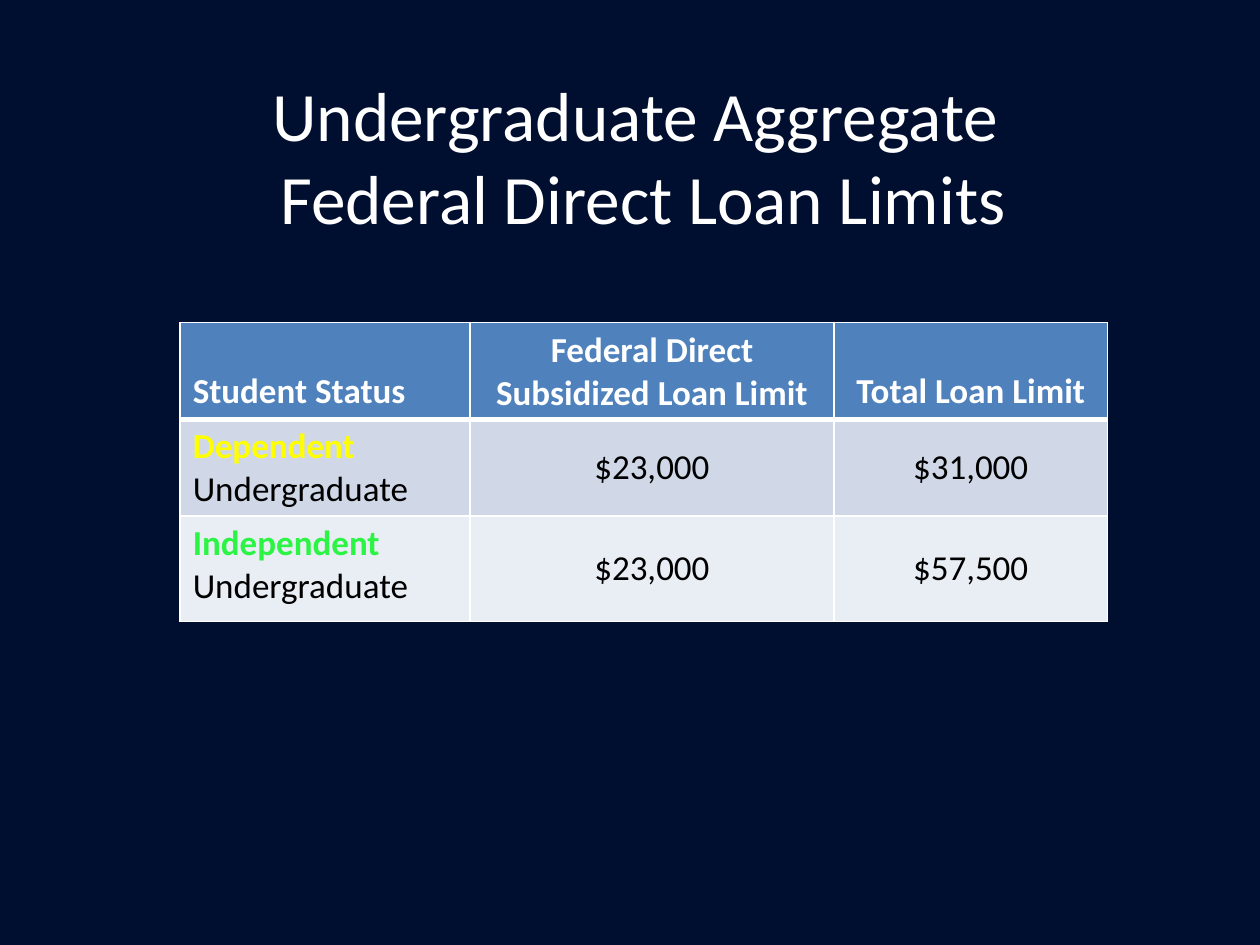
from lxml.etree import SubElement
from pptx import Presentation
from pptx.dml.color import RGBColor
from pptx.enum.text import MSO_ANCHOR, PP_ALIGN
from pptx.oxml.ns import qn
from pptx.util import Inches, Pt

WHITE = "FFFFFF"
BLACK = "000000"


def style_run(run, size, color, bold=False):
    run.font.name = "Calibri"
    run.font.size = Pt(size)
    run.font.bold = bold
    run.font.color.rgb = RGBColor.from_string(color)


def set_borders(cell, widths):
    """Draw white cell borders; widths maps a side tag to points."""
    properties = cell._tc.get_or_add_tcPr()
    for index, (side, width) in enumerate(widths.items()):
        line = SubElement(properties, qn(f"a:{side}"), w=str(Pt(width)))
        fill = SubElement(line, qn("a:solidFill"))
        SubElement(fill, qn("a:srgbClr"), val=WHITE)
        properties.insert(index, line)  # borders come before the cell fill


presentation = Presentation()
presentation.slide_width = Inches(10)
presentation.slide_height = Inches(7.5)
slide = presentation.slides.add_slide(presentation.slide_layouts[6])
slide.background.fill.solid()
slide.background.fill.fore_color.rgb = RGBColor.from_string("000E2F")

# Title
title = slide.shapes.add_textbox(Inches(0.44), Inches(0.61), Inches(9.33), Inches(1.25))
title_frame = title.text_frame
title_frame.word_wrap = True
title_frame.vertical_anchor = MSO_ANCHOR.MIDDLE
title_frame.text = "Undergraduate Aggregate \vFederal Direct Loan Limits"
title_paragraph = title_frame.paragraphs[0]
title_paragraph.alignment = PP_ALIGN.CENTER
for run in title_paragraph.runs:
    style_run(run, 39.6, WHITE)

# Loan limits table: each cell is a list of (text, color, bold) runs
column_widths = [2.3, 2.89, 2.17]
row_heights = [0.73, 0.73, 0.84]
row_fills = ["4F81BD", "D0D8E8", "E9EDF4"]
headers = ["Student Status", "Federal Direct Subsidized Loan Limit", "Total Loan Limit"]
rows = [[[(header, WHITE, True)] for header in headers]]
for status, status_color, *limits in [
    ("Dependent", "FFFF00", "$23,000", "$31,000"),
    ("Independent", "2CF444", "$23,000", "$57,500"),
]:
    status_runs = [(status, status_color, True), (" Undergraduate", BLACK, False)]
    rows.append([status_runs] + [[(limit, BLACK, False)] for limit in limits])

table = slide.shapes.add_table(
    len(rows), len(headers), Inches(1.43), Inches(2.56),
    Inches(sum(column_widths)), Inches(sum(row_heights)),
).table
for column, width in zip(table.columns, column_widths):
    column.width = Inches(width)

for row_index, cells in enumerate(rows):
    table.rows[row_index].height = Inches(row_heights[row_index])
    for column_index, runs in enumerate(cells):
        cell = table.cell(row_index, column_index)
        cell.fill.solid()
        cell.fill.fore_color.rgb = RGBColor.from_string(row_fills[row_index])
        set_borders(cell, {
            "lnL": 1,
            "lnR": 1,
            "lnT": 3 if row_index == 1 else 1,
            "lnB": 3 if row_index == 0 else 1,
        })
        paragraph = cell.text_frame.paragraphs[0]
        for text, color, bold in runs:
            run = paragraph.add_run()
            run.text = text
            style_run(run, 20, color, bold)
        if column_index > 0:
            paragraph.alignment = PP_ALIGN.CENTER
        if row_index == 0:
            cell.vertical_anchor = MSO_ANCHOR.BOTTOM
        elif column_index > 0:
            cell.vertical_anchor = MSO_ANCHOR.MIDDLE

presentation.save("out.pptx")
